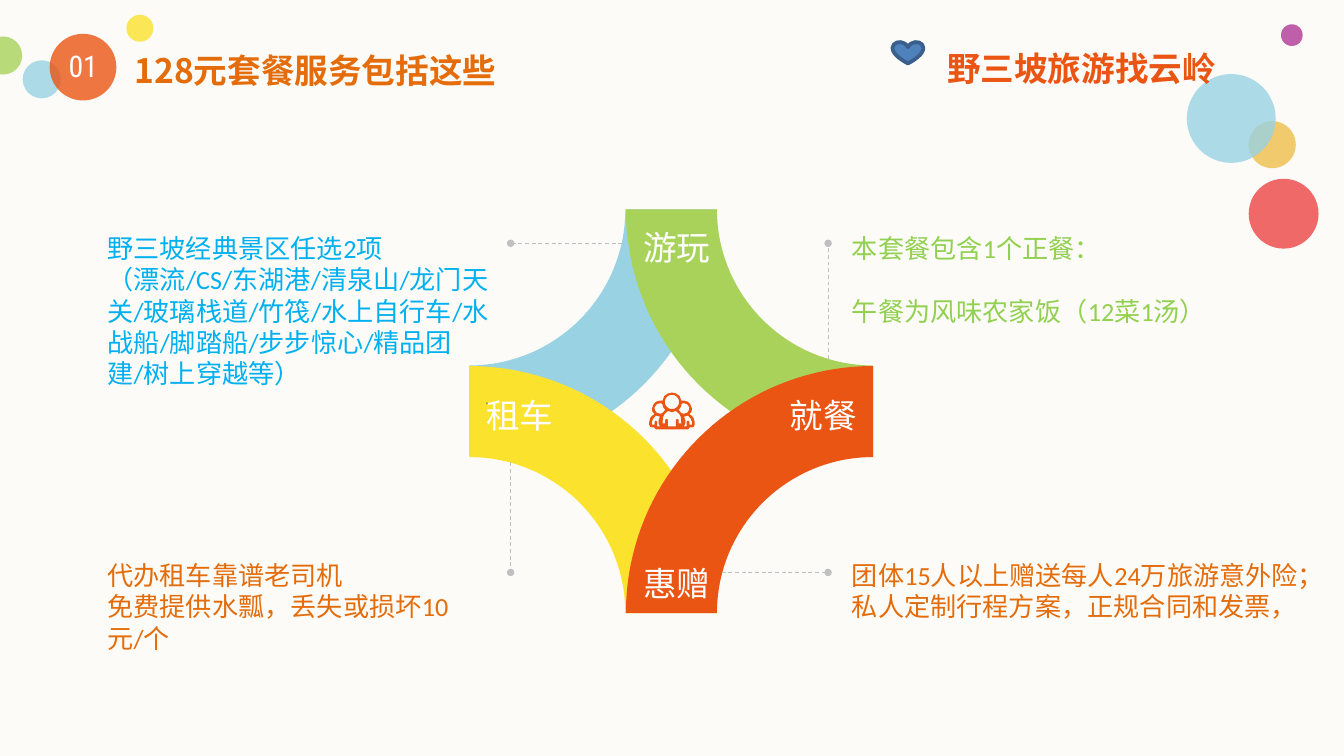
from math import cos, pi, sin

from lxml.etree import SubElement
from pptx import Presentation
from pptx.dml.color import RGBColor
from pptx.enum.dml import MSO_LINE
from pptx.enum.shapes import MSO_CONNECTOR, MSO_SHAPE
from pptx.enum.text import MSO_ANCHOR, MSO_AUTO_SIZE, PP_ALIGN
from pptx.oxml.ns import qn
from pptx.util import Cm, Pt

ORANGE, GREEN, BLUE, YELLOW = "EA5514", "A9D25A", "98D2E3", "FBE22D"
RUST = "E46C0A"

# Right half of the people icon on a 34 x 28 grid; the left half mirrors it
ICON_GRID = (34, 28)
ICON_OUTLINE = [(17, 0), (20, 0.7), (22.7, 2.6), (24, 6), (26, 6), (28.5, 6.7), (30.5, 8.3),
                (32, 12), (31.5, 14.5), (30, 16), (32, 17.5), (33.2, 19), (34, 22), (34, 24),
                (33.3, 25.5), (32, 26), (30.3, 26), (29, 27.5)]
ICON_BODY = [(17, 14.6), (20, 13.8), (22.5, 16), (23.7, 18.5), (24, 23), (22, 23),
             (22, 20.3), (21, 19.7), (20, 20.3), (20, 25.2)]
ICON_SIDE_HEAD = [(24.3, 8.3), (26, 7.9), (28.5, 8.8), (30, 11), (29.8, 13), (28.5, 15),
                  (26, 15.8), (24.3, 15.5), (22, 13), (23.5, 11)]
ICON_SIDE_BODY = [(26, 18), (29, 17.2), (31, 19.5), (32, 22), (32, 24), (30, 24), (30, 21.7),
                  (29, 21), (28, 21.7), (28, 25.2), (26, 25.2), (27, 23), (27, 20.5)]


def color(hex_value):
    return RGBColor.from_string(hex_value)


def apply_format(target, **values):
    for name, value in values.items():
        setattr(target, name, value)


def place(shape, box):
    apply_format(shape, **dict(zip(("left", "top", "width", "height"), map(Cm, box))))


def paint(shape, fill, opacity=100):
    shape.shadow.inherit = False
    shape.fill.solid()
    shape.fill.fore_color.rgb = color(fill)
    shape.line.fill.background()
    if opacity < 100:
        fill_element = shape.fill._xPr.find(qn("a:solidFill"))[0]
        SubElement(fill_element, qn("a:alpha"), val=str(opacity * 1000))


def write(shape, lines, size, hex_value, font="Calibri", bold=False, align=PP_ALIGN.LEFT,
          wrap=True, inset=True, gap=0):
    """Fill a text shape, one paragraph for each line."""
    frame = shape.text_frame
    frame.text = "\n".join(lines)
    apply_format(frame, word_wrap=wrap, auto_size=MSO_AUTO_SIZE.NONE,
                 vertical_anchor=MSO_ANCHOR.TOP)
    if not inset:
        apply_format(frame, margin_left=0, margin_top=0, margin_right=0, margin_bottom=0)
    for index, paragraph in enumerate(frame.paragraphs):
        apply_format(paragraph, alignment=align, space_before=Pt(gap if index else 0))
        apply_format(paragraph.runs[0].font, size=Pt(size), name=font, bold=bold)
        paragraph.runs[0].font.color.rgb = color(hex_value)


def add_text(slide, box, text, size, hex_value, **values):
    write(slide.shapes.add_textbox(*map(Cm, box)), [text], size, hex_value, **values)


def add_circle(slide, left, top, diameter, fill, opacity=80):
    circle = slide.shapes.add_shape(MSO_SHAPE.OVAL, *map(Cm, (left, top, diameter, diameter)))
    paint(circle, fill, opacity)


def add_outline(slide, contours, fill):
    """Draw closed contours, given in centimetres, as one shape."""
    contours = [[(Cm(x), Cm(y)) for x, y in contour] for contour in contours]
    builder = slide.shapes.build_freeform(*contours[0][0])
    for index, contour in enumerate(contours):
        if index:
            builder.move_to(*contour[0])
        builder.add_line_segments(contour[1:], close=True)
    paint(builder.convert_to_shape(), fill)


def arc(center_x, center_y, radius, start, end, steps=40):
    angles = [start + (end - start) * step / steps for step in range(steps + 1)]
    return [(center_x + radius * cos(a), center_y + radius * sin(a)) for a in angles]


def add_ring(slide, box):
    """Four quarter rings, each centred on a corner of the box."""
    left, top, width, height = box
    inner, outer = 2.95, 4.67
    for column, row, start, fill in [(0, 0, 0, BLUE), (0, 1, -pi / 2, YELLOW),
                                     (1, 0, pi / 2, GREEN), (1, 1, pi, ORANGE)]:
        center = (left + column * width, top + row * height)
        end = start + pi / 2
        add_outline(slide, [arc(*center, outer, start, end) + arc(*center, inner, end, start)],
                    fill)
    # Labels, offset from the corner of the box
    for x, y, text in [(3.04, 0.21, "游玩"), (5.81, 3.38, "就餐"),
                       (0.07, 3.38, "租车"), (3.04, 6.56, "惠赠")]:
        add_text(slide, (left + x, top + y, 1.8, 1.02), text, 18, "FFFFFF", wrap=False)


def add_people_icon(slide, box):
    left, top, width, height = box
    columns, rows = ICON_GRID

    def mirror(points):
        return [(columns - x, y) for x, y in reversed(points)]

    contours = [ICON_OUTLINE + mirror(ICON_OUTLINE), ICON_BODY + mirror(ICON_BODY),
                arc(17, 7, 5.3, 0, 2 * pi)]
    for side in (ICON_SIDE_HEAD, ICON_SIDE_BODY):
        contours += [side, mirror(side)]
    add_outline(slide, [[(left + x * width / columns, top + y * height / rows)
                         for x, y in contour] for contour in contours], ORANGE)


def add_leader(slide, start, end):
    """Dashed line that ends in a dot."""
    leader = slide.shapes.add_connector(MSO_CONNECTOR.STRAIGHT, *map(Cm, start + end))
    apply_format(leader.line, width=Pt(0.5), dash_style=MSO_LINE.DASH)
    leader.line.color.rgb = color("C0C0C0")
    SubElement(leader.line._ln, qn("a:tailEnd"), type="oval", w="sm", len="sm")
    SubElement(leader._element.spPr, qn("a:effectLst"))


def add_note(slide, number, box, lines, hex_value, gap=0):
    """Plain note in a body placeholder, brought in front of the diagram."""
    note = slide.placeholders[number]
    slide.shapes._spTree.append(note._element)
    place(note, box)
    write(note, lines, 14, hex_value, inset=False, gap=gap)
    for paragraph in note.text_frame.paragraphs:
        properties = paragraph._p.get_or_add_pPr()
        properties.set("marL", "0")
        properties.set("indent", "0")
        SubElement(properties, qn("a:buNone"))
    return note


def add_heading(slide, box):
    """Numbered title with bubbles at the left."""
    left, top, width, height = box
    for x, y, diameter, fill in [(2.39, 0.28, 0.51, YELLOW), (-0.3, 0.69, 0.72, GREEN),
                                 (0.43, 1.14, 0.72, BLUE), (0.94, 0.64, 1.26, ORANGE)]:
        add_circle(slide, left + x, top + y, diameter, fill)
    add_text(slide, (left + 1.12, top + 0.91, 0.91, 0.69), "01", 16, "FFFFFF",
             font="Roboto Condensed", align=PP_ALIGN.CENTER, inset=False)
    title = slide.shapes.title
    place(title, (left + 2.54, top + 0.94, width - 2.54, height - 0.94))
    write(title, ["128元套餐服务包括这些"], 18, RUST, font="Noto Sans CJK JP",
          bold=True, inset=False)


def add_tagline(slide, box):
    """Heart, slogan and bubbles at the right."""
    left, top, width, height = box
    for x, y, diameter, fill, opacity in [
            (7.34, -0.33, 0.41, "B03896", 80), (6.73, 1.5, 0.89, "F0CA6C", 100),
            (6.73, 2.59, 1.32, "EB4544", 80), (5.56, 0.61, 1.68, BLUE, 80)]:
        add_circle(slide, left + x, top + y, diameter, fill, opacity)
    add_text(slide, (left + 0.78, top, width - 0.78, height), "野三坡旅游找云岭", 18, ORANGE,
             bold=True, wrap=False)
    heart = slide.shapes.add_shape(MSO_SHAPE.HEART, *map(Cm, (left, top, 0.58, 0.41)))
    paint(heart, "4F81BD")
    heart.line.color.rgb = color("3A5F8C")
    heart.line.width = Pt(2)


def main():
    presentation = Presentation()
    apply_format(presentation, slide_width=Cm(25.4), slide_height=Cm(14.29))
    slide = presentation.slides.add_slide(presentation.slide_layouts[4])
    slide.background.fill.solid()
    slide.background.fill.fore_color.rgb = color("FCFBF7")

    # Diagram
    add_ring(slide, (8.87, 3.96, 7.63, 7.63))
    add_people_icon(slide, (12.27, 7.42, 0.86, 0.71))
    west, east, north, south = 9.65, 15.65, 4.6, 10.82
    for start, end in [((11.76, north), (west, north)), ((west, 8.74), (west, south)),
                       ((13.64, south), (east, south)), ((east, 6.78), (east, north))]:
        add_leader(slide, start, end)

    # Notes in the four body placeholders
    sights = add_note(slide, 1, (2.03, 4.39, 7.21, 3.33), [
        "野三坡经典景区任选2项",
        "（漂流/CS/东湖港/清泉山/龙门天关/玻璃栈道/竹筏/水上自行车/水战船/脚踏船/步步惊心/"
        "精品团建/树上穿越等）", "."], "00B0F0")
    dot = sights.text_frame.paragraphs[-1]
    dot.alignment = PP_ALIGN.RIGHT
    dot.runs[0].font.size = Pt(8)
    dot.runs[0].font.color.rgb = color("7F7F7F")
    add_note(slide, 2, (2.03, 10.57, 7.62, 1.19),
             ["代办租车靠谱老司机", "免费提供水瓢，丢失或损坏10元/个"], RUST)
    add_note(slide, 3, (16.1, 4.39, 8.53, 1.8),
             ["本套餐包含1个正餐：", "午餐为风味农家饭（12菜1汤）"], "92D050", gap=17)
    add_note(slide, 4, (16.1, 10.57, 8.84, 1.19),
             ["团体15人以上赠送每人24万旅游意外险；", "私人定制行程方案，正规合同和发票，"], RUST)

    # Top of the slide
    add_heading(slide, (0, 0, 10.26, 1.7))
    add_tagline(slide, (16.87, 0.79, 6.57, 1.02))
    presentation.save("out.pptx")


if __name__ == "__main__":
    main()
